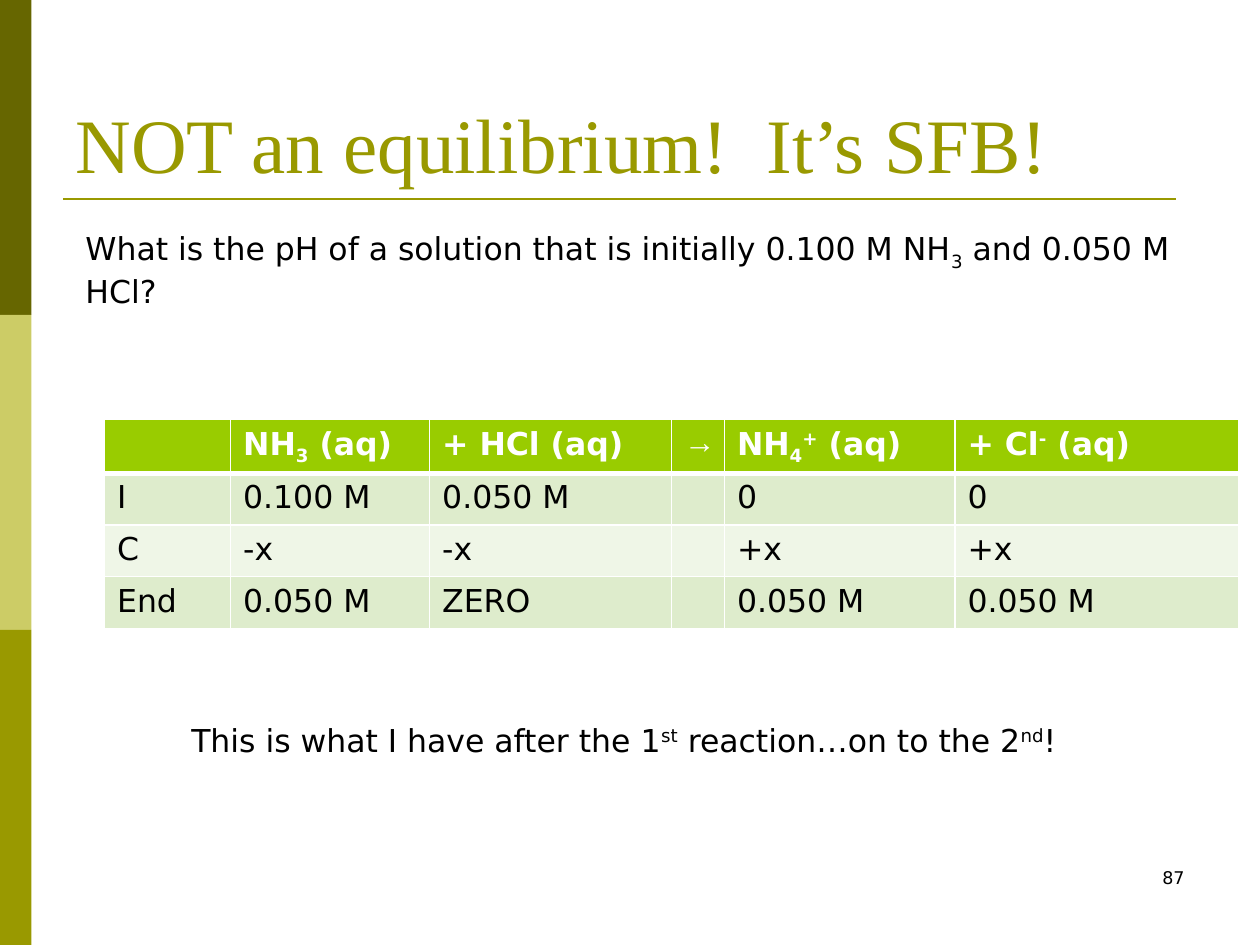
from lxml import etree
from pptx import Presentation
from pptx.dml.color import RGBColor
from pptx.enum.shapes import MSO_CONNECTOR, MSO_SHAPE
from pptx.enum.text import MSO_ANCHOR, MSO_AUTO_SIZE, PP_ALIGN
from pptx.oxml.ns import qn
from pptx.util import Inches, Pt

RECT, STRAIGHT = MSO_SHAPE.RECTANGLE, MSO_CONNECTOR.STRAIGHT
BOTTOM, LEFT, RIGHT = MSO_ANCHOR.BOTTOM, PP_ALIGN.LEFT, PP_ALIGN.RIGHT
GROW = MSO_AUTO_SIZE.SHAPE_TO_FIT_TEXT

OLIVE = RGBColor(0x99, 0x99, 0x00)
DARK_OLIVE = RGBColor(0x66, 0x66, 0x00)
PALE_OLIVE = RGBColor(0xCC, 0xCC, 0x66)
GREEN = RGBColor(0x99, 0xCC, 0x00)
BAND_DARK = RGBColor(0xDE, 0xEC, 0xCC)
BAND_LIGHT = RGBColor(0xEF, 0xF6, 0xE7)
WHITE = RGBColor(0xFF, 0xFF, 0xFF)
BLACK = RGBColor(0, 0, 0)
SANS, SERIF = "DejaVu Sans", "Times New Roman"

# Content: "|" separates runs, "_" starts a subscript and "^" a superscript
TITLE = "NOT an equilibrium!  It’s SFB!"
QUESTION = "What is the pH of a solution that is initially 0.100 M NH|_3| and 0.050 M HCl?"
CONCLUSION = "This is what I have after the 1|^st| reaction…on to the 2|^nd|!"
PAGE = "87"
ICE_ROWS = [
    ["", "NH|_3| (aq)", "+ HCl (aq)", "→", "NH|_4|^+| (aq)", "+ Cl|^-| (aq)"],
    ["I", "0.100 M", "0.050 M", "", "0", "0"],
    ["C", "-x", "-x", "", "+x", "+x"],
    ["End", "0.050 M", "ZERO", "", "0.050 M", "0.050 M"],
]
COL_WIDTHS = [1, 1.58, 1.92, 0.42, 1.83, 2.25]
ROW_HEIGHT = 0.41
SIDE_BARS = [DARK_OLIVE, PALE_OLIVE, OLIVE]
BASELINES = {"_": "-25000", "^": "30000"}


def write(tf, text, size=18, color=BLACK, name=SANS, bold=False, align=LEFT):
    p = tf.paragraphs[0]
    p.alignment = align
    p.font.size, p.font.name, p.font.bold = Pt(size), name, bold
    p.font.color.rgb = color
    for part in text.split("|"):
        r = p.add_run()
        shift = BASELINES.get(part[:1])
        r.text = part[1:] if shift else part
        if shift:
            r.font._element.set("baseline", shift)


def add_text(slide, box, text, wrap=True, grow=True, **style):
    tf = slide.shapes.add_textbox(*map(Inches, box)).text_frame
    tf.word_wrap = wrap
    if grow:
        tf.auto_size = GROW
    write(tf, text, **style)


def set_borders(cell, top, bottom):
    tc_pr = cell._tc.get_or_add_tcPr()
    widths = {"a:lnL": 1, "a:lnR": 1, "a:lnT": top, "a:lnB": bottom}
    for i, (tag, width) in enumerate(widths.items()):
        ln = etree.Element(qn(tag), w=str(Pt(width)))
        fill = etree.SubElement(ln, qn("a:solidFill"))
        etree.SubElement(fill, qn("a:srgbClr"), val=str(WHITE))
        tc_pr.insert(i, ln)


def add_ice_table(slide):
    size = sum(COL_WIDTHS), ROW_HEIGHT * len(ICE_ROWS)
    table = slide.shapes.add_table(
        len(ICE_ROWS), len(COL_WIDTHS), *map(Inches, (0.83, 3.33, *size))).table
    for column, width in zip(table.columns, COL_WIDTHS):
        column.width = Inches(width)
    for i, row in enumerate(ICE_ROWS):
        table.rows[i].height = Inches(ROW_HEIGHT)
        header = i == 0
        band = GREEN if header else BAND_DARK if i % 2 else BAND_LIGHT
        for j, text in enumerate(row):
            cell = table.cell(i, j)
            cell.fill.solid()
            cell.fill.fore_color.rgb = band
            set_borders(cell, top=3 if i == 1 else 1, bottom=3 if header else 1)
            if text:
                write(cell.text_frame, text, color=WHITE if header else BLACK,
                      name=SERIF if text == "→" else SANS, bold=header)


def main():
    prs = Presentation()
    prs.slide_width, prs.slide_height = Inches(10), Inches(7.5)
    slide = prs.slides.add_slide(prs.slide_layouts[5])

    # Side bars and title rule
    for i, color in enumerate(SIDE_BARS):
        sp = slide.shapes.add_shape(RECT, 0, Inches(2.5 * i), Inches(0.25), Inches(2.5))
        sp.shadow.inherit = False
        sp.fill.solid()
        sp.fill.fore_color.rgb = color
        sp.line.fill.background()
    rule = slide.shapes.add_connector(STRAIGHT, *map(Inches, (0.5, 1.58, 9.33, 1.58)))
    rule.line.color.rgb = OLIVE
    rule.line.width = Pt(1.5)
    etree.SubElement(rule._element.spPr, qn("a:effectLst"))

    # Title
    title = slide.shapes.title
    title.left, title.top, title.width, title.height = map(Inches, (0.5, 0.3, 9, 1.25))
    title.text_frame.vertical_anchor = BOTTOM
    write(title.text_frame, TITLE, size=44, color=OLIVE, name=SERIF)

    # Table and texts
    add_ice_table(slide)
    add_text(slide, (7.17, 6.83, 2.33, 0.5), PAGE, grow=False, size=10, align=RIGHT)
    add_text(slide, (0.58, 1.77, 8.92, 0.71), QUESTION)
    add_text(slide, (1.42, 5.67, 7.34, 0.4), CONCLUSION, wrap=False)

    prs.save("out.pptx")


if __name__ == "__main__":
    main()
